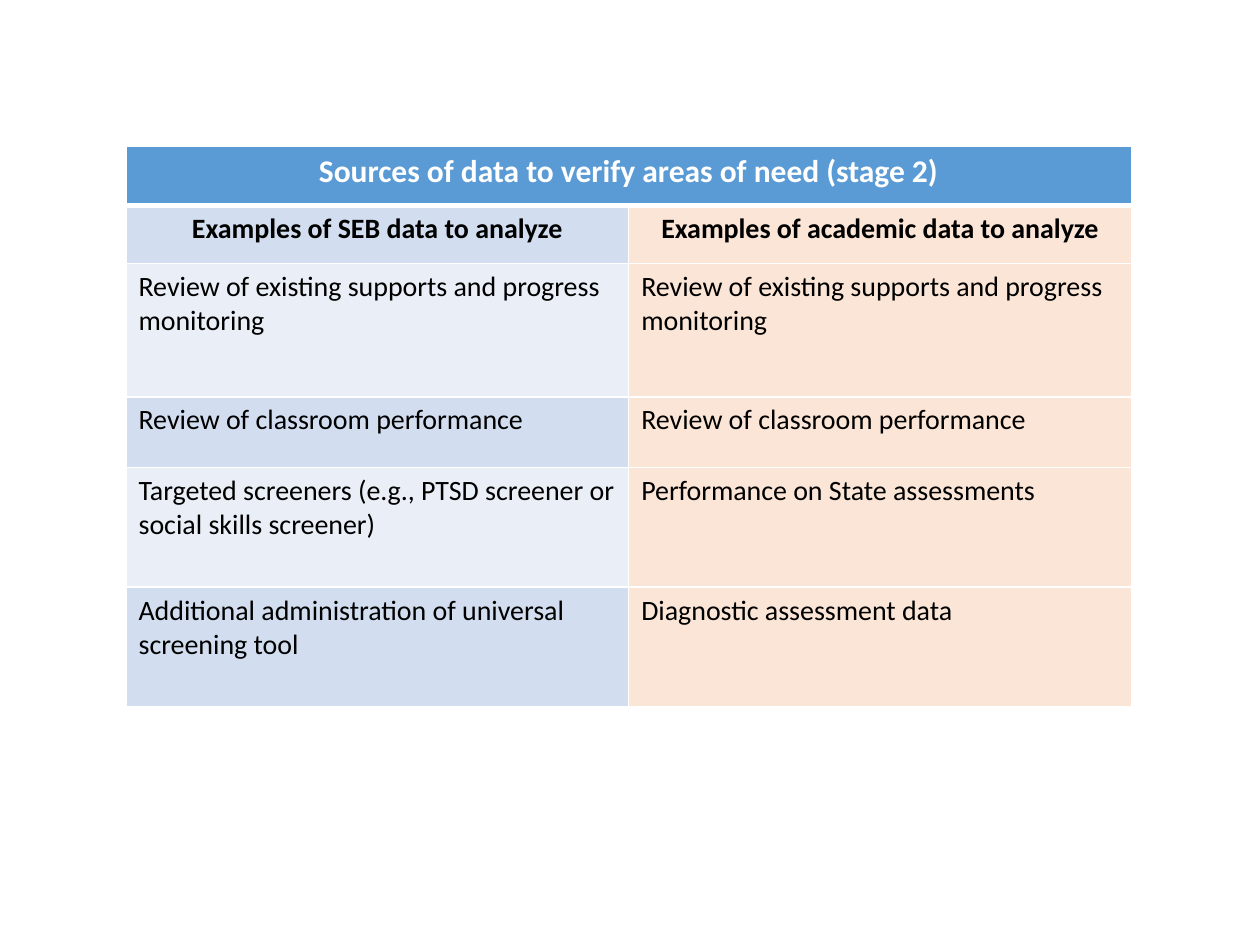
from lxml import etree
from pptx import Presentation
from pptx.dml.color import RGBColor
from pptx.enum.text import PP_ALIGN
from pptx.oxml.ns import qn
from pptx.util import Inches, Pt

CENTER, LEFT = PP_ALIGN.CENTER, PP_ALIGN.LEFT
WHITE = RGBColor(0xFF, 0xFF, 0xFF)
BLACK = RGBColor(0, 0, 0)
BLUE = RGBColor(0x5B, 0x9B, 0xD5)
MID_BLUE = RGBColor(0xD2, 0xDE, 0xEF)
PALE_BLUE = RGBColor(0xEA, 0xEF, 0xF7)
PEACH = RGBColor(0xFB, 0xE5, 0xD6)

TITLE = "Sources of data to verify areas of need (stage 2)"
ROWS = [
    (TITLE, ""),
    ("Examples of SEB data to analyze", "Examples of academic data to analyze"),
    ("Review of existing supports and progress monitoring",
     "Review of existing supports and progress monitoring"),
    ("Review of classroom performance", "Review of classroom performance"),
    ("Targeted screeners (e.g., PTSD screener or social skills screener)",
     "Performance on State assessments"),
    ("Additional administration of universal screening tool",
     "Diagnostic assessment data"),
]
HEIGHTS = [0.47, 0.46, 1.06, 0.56, 0.95, 0.95]
COL_WIDTH = 3.99


def set_border(cell, side, width):
    ln = etree.SubElement(cell._tc.get_or_add_tcPr(), qn(f"a:ln{side}"), w=str(Pt(width)))
    fill = etree.SubElement(ln, qn("a:solidFill"))
    etree.SubElement(fill, qn("a:srgbClr"), val=str(WHITE))


prs = Presentation()
prs.slide_width, prs.slide_height = Inches(10), Inches(7.5)
s = prs.slides.add_slide(prs.slide_layouts[6])

# Table grid
table = s.shapes.add_table(len(ROWS), 2, Inches(1), Inches(1.16),
                           Inches(2 * COL_WIDTH), Inches(sum(HEIGHTS))).table
for col in table.columns:
    col.width = Inches(COL_WIDTH)
for row, height in zip(table.rows, HEIGHTS):
    row.height = Inches(height)
table.cell(0, 0).merge(table.cell(0, 1))

# Cells: title row, heading row, then banded body rows
for i, texts in enumerate(ROWS):
    for j, text in enumerate(texts):
        cell = table.cell(i, j)
        for side in "LRTB":
            thick = (i, side) in ((0, "B"), (1, "T"))
            set_border(cell, side, 3 if thick else 1)
        cell.fill.solid()
        if i == 0:
            cell.fill.fore_color.rgb = BLUE
        elif j == 1:
            cell.fill.fore_color.rgb = PEACH
        else:
            cell.fill.fore_color.rgb = MID_BLUE if i % 2 else PALE_BLUE
        if not text:
            continue
        p = cell.text_frame.paragraphs[0]
        p.alignment = CENTER if i < 2 else LEFT
        r = p.add_run()
        r.text = text
        r.font.name = "Calibri"
        r.font.size = Pt(18 if i == 0 else 16)
        r.font.bold = i < 2
        r.font.color.rgb = WHITE if i == 0 else BLACK

prs.save("out.pptx")
